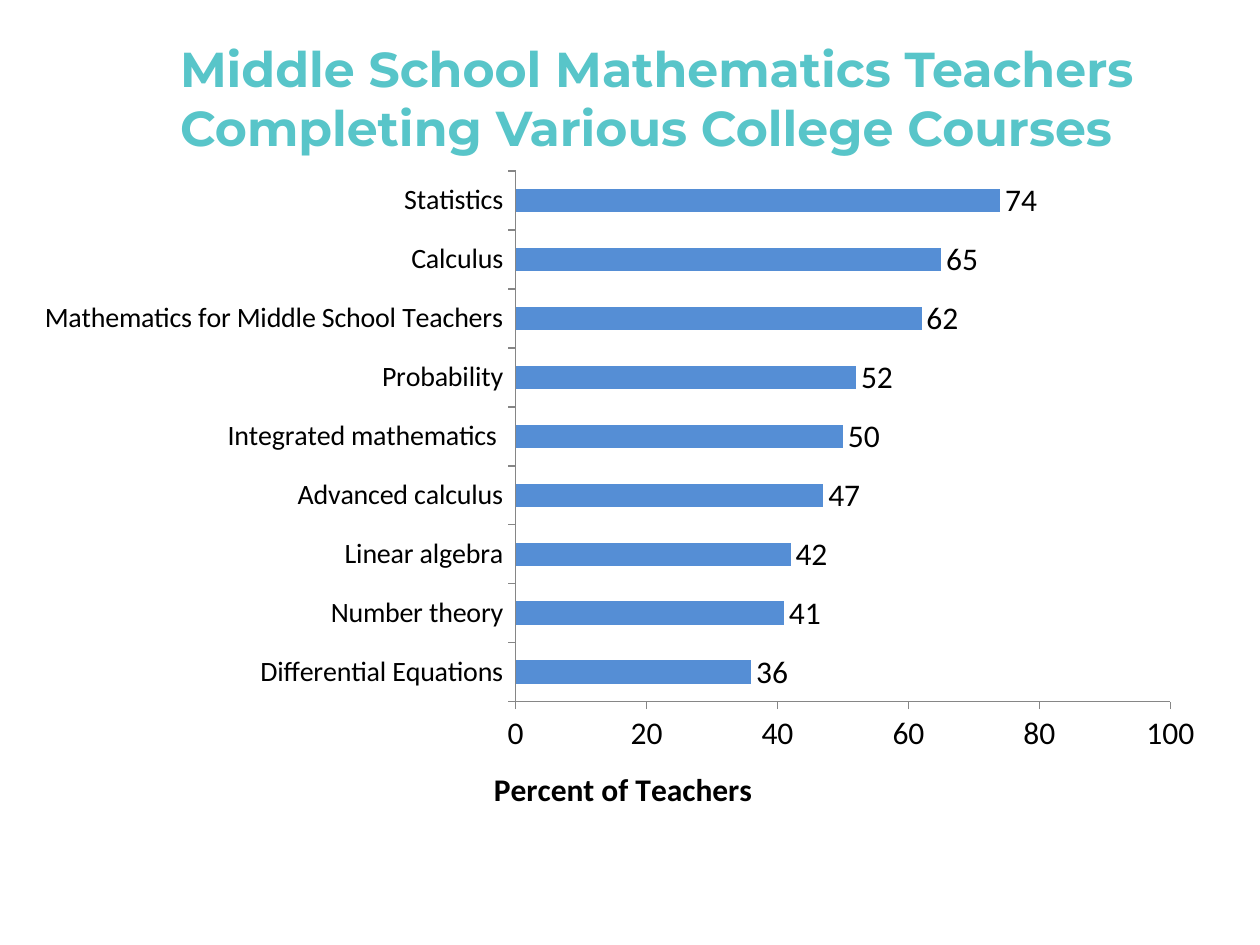
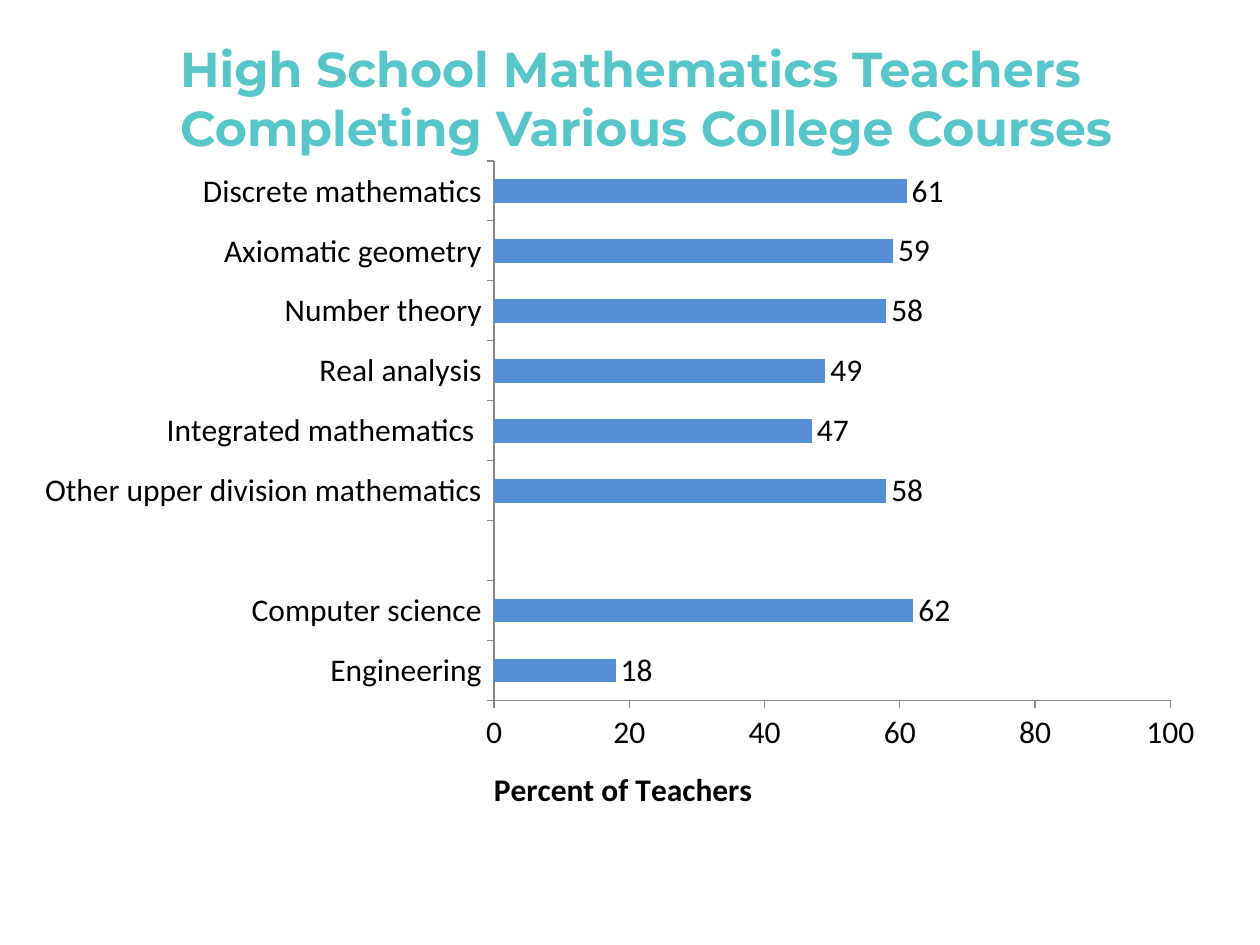
"""Build two slides on the college courses completed by mathematics teachers."""
from lxml import etree
from pptx import Presentation
from pptx.chart.data import CategoryChartData
from pptx.dml.color import RGBColor
from pptx.enum import chart as ch, text
from pptx.oxml import ns
from pptx.util import Cm, Pt

TEAL = RGBColor(0x58, 0xC5, 0xC9)
BLUE = RGBColor(0x55, 0x8E, 0xD5)
BLACK = RGBColor(0, 0, 0)
GREY = RGBColor(0x86, 0x86, 0x86)
TITLE_BOX = Cm(3.38), Cm(0.76), Cm(20.75), Cm(2.41)
TITLE_FONT, CHART_FONT = "Montserrat", "Calibri"

MIDDLE_COURSES = [
    ("Differential Equations", 36),
    ("Number theory", 41),
    ("Linear algebra", 42),
    ("Advanced calculus", 47),
    ("Integrated mathematics ", 50),
    ("Probability", 52),
    ("Mathematics for Middle School Teachers", 62),
    ("Calculus", 65),
    ("Statistics", 74),
]
HIGH_COURSES = [
    ("Engineering", 18),
    ("Computer science", 62),
    ("", None),
    ("Other upper division mathematics", 58),
    ("Integrated mathematics ", 47),
    ("Real analysis", 49),
    ("Number theory", 58),
    ("Axiomatic geometry", 59),
    ("Discrete mathematics", 61),
]


def set_layout(parent, index, **values):
    """Give a chart part a fixed place, in fractions of the chart."""
    for old in parent.findall(ns.qn("c:layout")):
        parent.remove(old)
    layout = etree.Element(ns.qn("c:layout"))
    manual = etree.SubElement(layout, ns.qn("c:manualLayout"))
    for name, value in values.items():
        etree.SubElement(manual, ns.qn(f"c:{name}")).set("val", str(value))
    parent.insert(index, layout)


def style_font(font, name, size, color, bold=False):
    """Set the name, size, colour and weight of a font."""
    font.name, font.size, font.bold = name, Pt(size), bold
    font.color.rgb = color


def add_title(s, title, box):
    """Add the slide title in the given box."""
    tf = s.shapes.add_textbox(*box).text_frame
    tf.word_wrap = True
    tf.vertical_anchor = text.MSO_ANCHOR.MIDDLE
    r = tf.paragraphs[0].add_run()
    r.text = title
    style_font(r.font, TITLE_FONT, 28, TEAL, bold=True)


def style_axis(axis, size):
    """Give an axis its line, outward ticks and font."""
    axis.has_major_gridlines = False
    axis.major_tick_mark = ch.XL_TICK_MARK.OUTSIDE
    axis.minor_tick_mark = ch.XL_TICK_MARK.NONE
    axis.format.line.color.rgb = GREY
    axis.format.line.width = Pt(0.75)
    style_font(axis.tick_labels.font, CHART_FONT, size, BLACK)


def add_course_chart(s, courses, box, label_size, plot_left):
    """Add the bar chart of courses in the given box."""
    data = CategoryChartData(number_format="General")
    names, percents = zip(*courses)
    data.categories = names
    data.add_series("Series 1", percents)
    chart = s.shapes.add_chart(ch.XL_CHART_TYPE.BAR_CLUSTERED, *box, data).chart
    chart.has_legend = chart.has_title = False
    style_font(chart.font, CHART_FONT, 18, BLACK)

    plot = chart.plots[0]
    plot.gap_width = 151
    plot.vary_by_categories = False
    fill = plot.series[0].format.fill
    fill.solid()
    fill.fore_color.rgb = BLUE
    plot.has_data_labels = True
    labels = plot.data_labels
    labels.show_value = True
    labels.position = ch.XL_LABEL_POSITION.OUTSIDE_END
    style_font(labels.font, CHART_FONT, 18, BLACK)

    style_axis(chart.category_axis, label_size)
    axis = chart.value_axis
    style_axis(axis, 18)
    axis.minimum_scale, axis.maximum_scale, axis.major_unit = 0, 100, 20
    title = axis.axis_title
    r = title.text_frame.paragraphs[0].add_run()
    r.text = "Percent of Teachers"
    style_font(r.font, CHART_FONT, 18, BLACK, bold=True)

    set_layout(title._element, 1, xMode="edge", yMode="edge", x=0.39, y=0.9)
    plot_area = chart._chartSpace.find(".//" + ns.qn("c:plotArea"))
    set_layout(plot_area, 0, layoutTarget="inner", xMode="edge", yMode="edge",
               x=plot_left, y=0.02, w=round(0.96 - plot_left, 3), h=0.79)


def add_course_slide(prs, school, courses, top, height, label_size, plot_left):
    """Add a slide with the title and chart for one type of school."""
    s = prs.slides.add_slide(prs.slide_layouts[6])
    box = Cm(0.43), Cm(top), Cm(24.13), Cm(height)
    add_course_chart(s, courses, box, label_size, plot_left)
    title = f"{school} School Mathematics Teachers Completing Various College Courses"
    add_title(s, title, TITLE_BOX)


def main():
    """Build and save the presentation."""
    prs = Presentation()
    prs.slide_width, prs.slide_height = Cm(25.4), Cm(19.05)
    add_course_slide(prs, "Middle", MIDDLE_COURSES, 3.18, 13.54, 16, 0.413)
    add_course_slide(prs, "High", HIGH_COURSES, 2.97, 13.77, 18, 0.395)
    prs.save("out.pptx")


if __name__ == "__main__":
    main()
